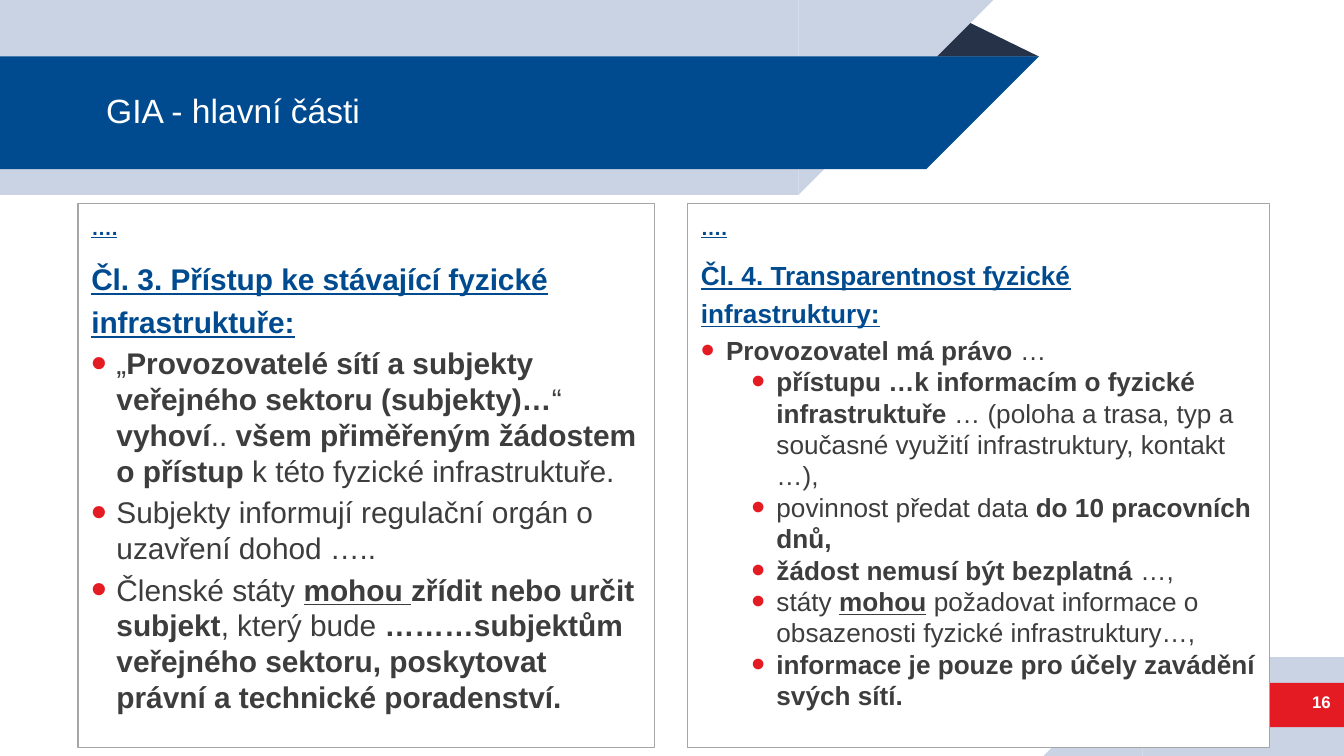
from dataclasses import dataclass
from lxml.etree import SubElement as Sub
from pptx import Presentation
from pptx.dml.color import RGBColor as RGB
from pptx.enum.shapes import MSO_SHAPE as Kind
from pptx.enum.text import MSO_ANCHOR as Anchor, PP_ALIGN as Align
from pptx.oxml.ns import qn
from pptx.util import Pt


@dataclass(frozen=True)
class Theme:
    font: str = "Arial"
    blue: str = "004B8F"
    pale: str = "CAD3E3"
    navy: str = "263248"
    red: str = "E41B23"
    ink: str = "3D3D3D"
    gray: str = "A6A6A6"
    white: str = "FFFFFF"
    title: float = 18
    lead: float = 11
    page: float = 9


T = Theme()

# Each bullet: level, then runs of (text, style); b is bold, u is underlined
LEFT = [
    (0, [("„", ""),
         ("Provozovatelé sítí a subjekty veřejného sektoru (subjekty)…", "b"),
         ("“ ", ""), ("vyhoví", "b"), (".. ", ""),
         ("všem přiměřeným žádostem o přístup ", "b"),
         ("k této fyzické infrastruktuře.", "")]),
    (0, [("Subjekty informují regulační orgán o uzavření dohod …..", "")]),
    (0, [("Členské státy ", ""), ("mohou ", "bu"),
         ("zřídit nebo určit subjekt", "b"), (", který bude ", ""),
         ("………subjektům veřejného sektoru, poskytovat právní a technické "
          "poradenství.", "b")]),
]
RIGHT = [
    (0, [("Provozovatel má právo ", "b"), ("…", "")]),
    (1, [("přístupu …k informacím o fyzické infrastruktuře ", "b"),
         ("… (poloha a trasa, typ a současné využití infrastruktury, "
          "kontakt …),", "")]),
    (1, [("povinnost předat data ", ""), ("do 10 pracovních dnů,", "b")]),
    (1, [("žádost nemusí být bezplatná ", "b"), ("…,", "")]),
    (1, [("státy ", ""), ("mohou", "bu"), (" ", "b"),
         ("požadovat informace o obsazenosti fyzické infrastruktury…,", "")]),
    (1, [("informace je pouze pro účely zavádění svých sítí.", "b")]),
]


def add_box(slide, kind, at, fill, line=None):
    box = slide.shapes.add_shape(kind, *map(Pt, at))
    box.shadow.inherit = False
    box.fill.solid()
    box.fill.fore_color.rgb = RGB.from_string(fill)
    if line:
        box.line.color.rgb = RGB.from_string(line)
        box.line.width = Pt(0.75)
    else:
        box.line.fill.background()
    return box


def add_band(slide, top, width, high, fill):
    """A bar from the left edge with a slanted end."""
    add_box(slide, Kind.RECTANGLE, (0, top, width, high), fill)
    end = add_box(slide, Kind.RIGHT_TRIANGLE, (width, top, high, high), fill)
    end.rotation = 180
    flip(end)


def flip(shape):
    shape._element.spPr.find(qn("a:xfrm")).set("flipH", "1")


def add_run(para, text, size, color, style=""):
    run = para.add_run()
    run.text = text
    font = run.font
    font.name, font.size = T.font, Pt(size)
    font.color.rgb = RGB.from_string(color)
    font.bold, font.underline = "b" in style, "u" in style


def add_dot(para, level):
    props = para._p.get_or_add_pPr()
    props.set("marL", str(Pt(13.5 + 27 * level)))
    props.set("indent", str(-Pt(13.5)))
    tint = Sub(props, qn("a:buClr"))
    Sub(tint, qn("a:srgbClr"), val=T.red)
    Sub(props, qn("a:buSzPct"), val="150000")
    Sub(props, qn("a:buFont"), typeface=T.font)
    Sub(props, qn("a:buChar"), char="•")


def add_panel(slide, left, width, head, size, items):
    box = add_box(slide, Kind.RECTANGLE, (left, 108.9, width, 291.5),
                  T.white, T.gray)
    frame = box.text_frame
    frame.word_wrap = True
    frame.vertical_anchor = Anchor.TOP

    # Lead-in and heading
    lead, top = frame.paragraphs[0], frame.add_paragraph()
    for para, text, pts in ((lead, "….", T.lead), (top, head, size)):
        para.alignment, para.line_spacing = Align.LEFT, 1.2
        add_run(para, text, pts, T.blue, "bu")
    top.space_before = Pt(7.5)

    # Bullets
    for level, runs in items:
        para = frame.add_paragraph()
        para.alignment, para.level = Align.LEFT, level
        para.space_before = Pt(0 if level else 3)
        add_dot(para, level)
        for text, style in runs:
            add_run(para, text, size, T.ink, style)


def add_decor(slide):
    # Header bands
    fold = add_box(slide, Kind.ISOSCELES_TRIANGLE, (495.4, 10.1, 61.2, 20.2),
                   T.navy)
    fold.adjustments[0] = 0.324
    add_band(slide, 0, 427.7, 104.4, T.pale)
    add_band(slide, 30.2, 496.1, 60.5, T.blue)

    # Footer corner
    add_box(slide, Kind.RECTANGLE, (612, 352.1, 108, 52.9), T.pale)
    flip(add_box(slide, Kind.RIGHT_TRIANGLE, (559.1, 352.1, 52.9, 52.9),
                 T.pale))
    add_box(slide, Kind.RECTANGLE, (571, 365.8, 149, 23.8), T.red)


def set_title(slide, text):
    title = slide.shapes.title
    title.left, title.top, title.width, title.height = map(
        Pt, (49.7, 30.2, 489.6, 60.5))
    title.text_frame.vertical_anchor = Anchor.MIDDLE
    para = title.text_frame.paragraphs[0]
    para.alignment, para.line_spacing = Align.LEFT, 0.9
    add_run(para, text, T.title, T.white)
    slide.shapes._spTree.append(title._element)  # in front of the bands


def add_page(slide, text):
    box = slide.shapes.add_textbox(*map(Pt, (644.4, 365, 75.6, 21.6)))
    frame = box.text_frame
    frame.word_wrap = True
    frame.vertical_anchor = Anchor.MIDDLE
    para = frame.paragraphs[0]
    para.alignment = Align.RIGHT
    add_run(para, text, T.page, T.white, "b")


def main():
    deck = Presentation()
    deck.slide_width, deck.slide_height = Pt(720), Pt(405)
    slide = deck.slides.add_slide(deck.slide_layouts[5])
    add_decor(slide)
    set_title(slide, "GIA - hlavní části")
    add_page(slide, "16")
    add_panel(slide, 41.8, 309,
              "Čl. 3. Přístup ke stávající fyzické infrastruktuře:", 16, LEFT)
    add_panel(slide, 368.4, 311.8,
              "Čl. 4. Transparentnost fyzické infrastruktury:", 14, RIGHT)
    deck.save("out.pptx")


if __name__ == "__main__":
    main()
